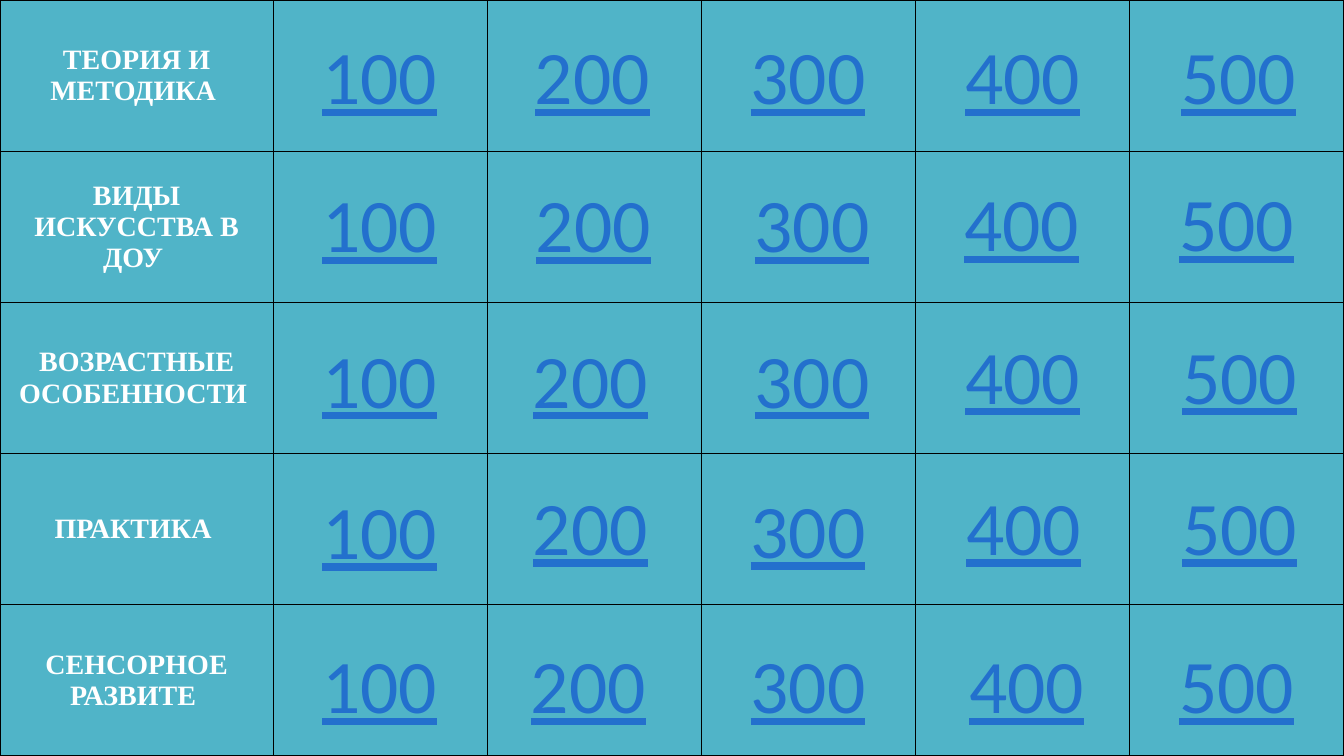
from dataclasses import dataclass

import pptx
import pptx.dml.color
import pptx.enum.text
import pptx.util
from lxml import etree
from pptx.oxml.ns import qn
from pptx.util import Inches


@dataclass(frozen=True)
class Theme:
    background: str = "50B4C8"
    border: str = "000000"
    category_color: str = "FFFFFF"
    score_color: str = "2370CD"
    category_font: str = "Times New Roman"
    score_font: str = "Calibri"
    category_size: int = 20
    score_size: int = 54
    border_width: int = 1


THEME = Theme()
SLIDE_WIDTH, SLIDE_HEIGHT = 13.33, 7.5
CATEGORY_WIDTH = 2.71
SCORE_BOX_WIDTH, SCORE_BOX_HEIGHT = 2.13, 1.01

CATEGORIES = [
    "ТЕОРИЯ И МЕТОДИКА ",
    "ВИДЫ ИСКУССТВА В ДОУ ",
    "ВОЗРАСТНЫЕ ОСОБЕННОСТИ ",
    "ПРАКТИКА ",
    "СЕНСОРНОЕ РАЗВИТЕ ",
]
# For each score: left and top of its box in every category row.
SCORE_PLACES = {
    "100": [(2.7, 0.24), (2.7, 1.71), (2.7, 3.25), (2.7, 4.75), (2.7, 6.28)],
    "200": [(4.81, 0.24), (4.82, 1.71), (4.79, 3.25), (4.79, 4.71), (4.77, 6.28)],
    "300": [(6.95, 0.24), (6.99, 1.71), (6.99, 3.25), (6.95, 4.74), (6.95, 6.28)],
    "400": [(9.08, 0.24), (9.07, 1.7), (9.08, 3.21), (9.09, 4.71), (9.12, 6.28)],
    "500": [(11.22, 0.24), (11.2, 1.7), (11.23, 3.21), (11.23, 4.71), (11.2, 6.28)],
}


def rgb(color):
    return pptx.dml.color.RGBColor.from_string(color)


def format_centered(text_frame, font_name, size, color):
    """Center the only paragraph and return the font of its run."""
    paragraph = text_frame.paragraphs[0]
    paragraph.alignment = pptx.enum.text.PP_ALIGN.CENTER
    font = paragraph.runs[0].font
    font.name = font_name
    font.size = pptx.util.Pt(size)
    font.color.rgb = rgb(color)
    return font


def add_borders(cell):
    properties = cell._tc.get_or_add_tcPr()
    for side in ("a:lnL", "a:lnR", "a:lnT", "a:lnB"):
        line = etree.SubElement(properties, qn(side), w=str(pptx.util.Pt(THEME.border_width)))
        fill = etree.SubElement(line, qn("a:solidFill"))
        etree.SubElement(fill, qn("a:srgbClr"), val=THEME.border)


def add_board(slide):
    column_count = 1 + len(SCORE_PLACES)
    table = slide.shapes.add_table(
        len(CATEGORIES), column_count, 0, 0, Inches(SLIDE_WIDTH), Inches(SLIDE_HEIGHT)
    ).table
    table.first_row = False
    table.horz_banding = False
    score_width = (SLIDE_WIDTH - CATEGORY_WIDTH) / len(SCORE_PLACES)
    for index, column in enumerate(table.columns):
        column.width = Inches(score_width if index else CATEGORY_WIDTH)
    for cell in table.iter_cells():
        add_borders(cell)
        cell.fill.background()
    for row, category in enumerate(CATEGORIES):
        cell = table.cell(row, 0)
        cell.text_frame.text = category
        cell.vertical_anchor = pptx.enum.text.MSO_ANCHOR.MIDDLE
        font = format_centered(
            cell.text_frame, THEME.category_font, THEME.category_size, THEME.category_color
        )
        font.bold = True


def add_score(slide, score, left, top):
    box = slide.shapes.add_textbox(
        Inches(left), Inches(top), Inches(SCORE_BOX_WIDTH), Inches(SCORE_BOX_HEIGHT)
    )
    text_frame = box.text_frame
    text_frame.word_wrap = True
    text_frame.auto_size = pptx.enum.text.MSO_AUTO_SIZE.SHAPE_TO_FIT_TEXT
    text_frame.text = score
    font = format_centered(text_frame, THEME.score_font, THEME.score_size, THEME.score_color)
    font.underline = True


def main():
    presentation = pptx.Presentation()
    presentation.slide_width = Inches(SLIDE_WIDTH)
    presentation.slide_height = Inches(SLIDE_HEIGHT)
    slide = presentation.slides.add_slide(presentation.slide_layouts.get_by_name("Blank"))
    slide.background.fill.solid()
    slide.background.fill.fore_color.rgb = rgb(THEME.background)
    add_board(slide)
    for score, places in SCORE_PLACES.items():
        for left, top in places:
            add_score(slide, score, left, top)
    presentation.save("out.pptx")


if __name__ == "__main__":
    main()
